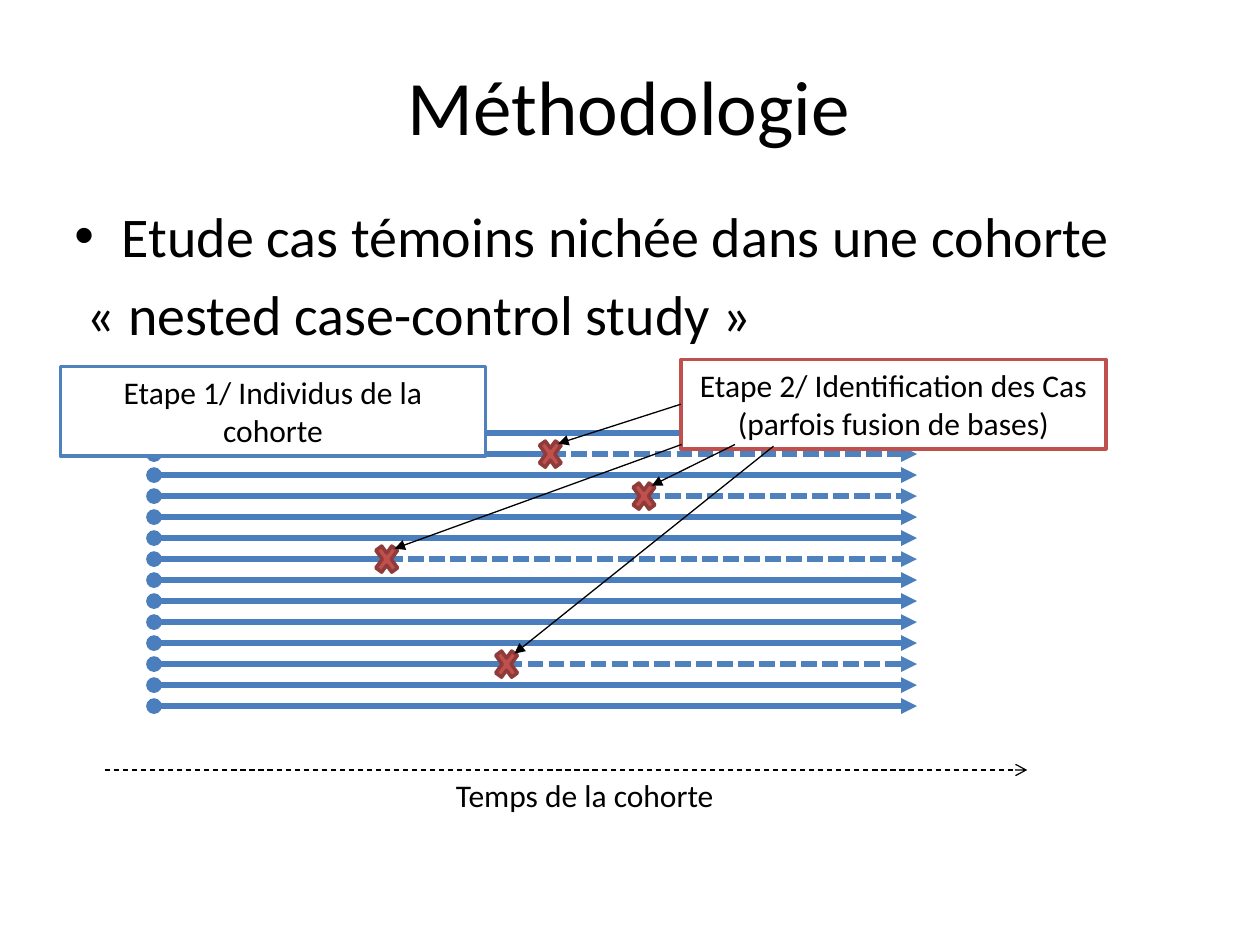
from pptx import Presentation
from pptx.dml.color import RGBColor
from pptx.enum.dml import MSO_LINE
from pptx.enum.shapes import MSO_CONNECTOR, MSO_SHAPE
from pptx.enum.text import MSO_ANCHOR, PP_ALIGN
from pptx.oxml.ns import qn
from pptx.util import Pt
from lxml.etree import SubElement

BLACK = RGBColor(0x00, 0x00, 0x00)
WHITE = RGBColor(0xFF, 0xFF, 0xFF)
BLUE = RGBColor(0x4F, 0x81, 0xBD)
LINE_BLUE = RGBColor(0x4B, 0x7E, 0xBC)
RED = RGBColor(0xC0, 0x50, 0x4D)
DARK_RED = RGBColor(0x8E, 0x3B, 0x39)

ROW_COUNT, FIRST_ROW, ROW_PITCH = 14, 247.5, 12
ROW_START, ROW_END = 88, 524
CASES = {1: 314.5, 3: 368, 6: 221, 11: 289.5}  # row number: time of the event
POINTER_STARTS = {3: (420, 254), 6: (389.5, 254), 11: (442, 255)}


def row_y(row):
    return FIRST_ROW + row * ROW_PITCH


class SlideBuilder:
    """Draws elements on one slide in a common style; lengths are in points."""

    def __init__(self, slide, font="Calibri"):
        self.slide = slide
        self.font = font

    def style(self, paragraph, size, align=None):
        paragraph.alignment = align
        paragraph.font.name = self.font
        paragraph.font.size = Pt(size)
        paragraph.font.color.rgb = BLACK

    def title(self, text, left, top, width, height):
        title = self.slide.shapes.title
        title.left, title.top = Pt(left), Pt(top)
        title.width, title.height = Pt(width), Pt(height)
        title.text_frame.text = text
        title.text_frame.vertical_anchor = MSO_ANCHOR.MIDDLE
        self.style(title.text_frame.paragraphs[0], 44, PP_ALIGN.CENTER)

    def text(self, lines, left, top, width, height, size):
        box = self.slide.shapes.add_textbox(Pt(left), Pt(top), Pt(width), Pt(height))
        box.text_frame.word_wrap = True
        box.text_frame.text = "\n".join(lines)
        for paragraph in box.text_frame.paragraphs:
            self.style(paragraph, size)
        return box.text_frame.paragraphs

    def indent(self, paragraph, margin, first_line=0, bullet=None):
        properties = paragraph._p.get_or_add_pPr()
        properties.set("marL", str(Pt(margin)))
        properties.set("indent", str(Pt(first_line)))
        if bullet:
            # Bullet elements come before the default run properties.
            for position, (tag, name, value) in enumerate(
                [("a:buFont", "typeface", "Arial"), ("a:buChar", "char", bullet)]
            ):
                element = SubElement(properties, qn(tag))
                element.set(name, value)
                properties.insert(position, element)

    def shape(self, kind, left, top, width, height, fill, line):
        shape = self.slide.shapes.add_shape(kind, Pt(left), Pt(top), Pt(width), Pt(height))
        shape.shadow.inherit = False
        shape.fill.solid()
        shape.fill.fore_color.rgb = fill
        shape.line.color.rgb = line
        shape.line.width = Pt(2)
        return shape

    def label(self, text, left, top, line):
        box = self.shape(MSO_SHAPE.RECTANGLE, left, top, 243, 51, WHITE, line)
        box.text_frame.word_wrap = True
        box.text_frame.text = text
        self.style(box.text_frame.paragraphs[0], 18, PP_ALIGN.CENTER)
        return box

    def cross(self, x, y):
        """Draw a case mark centred on the point."""
        width, height = 17.5, 24
        self.shape(MSO_SHAPE.MATH_MULTIPLY, x - width / 2, y - height / 2,
                   width, height, RED, DARK_RED)

    def arrow(self, start, end, color=BLACK, width=0.75, dash=None, head=None, tail="triangle"):
        connector = self.slide.shapes.add_connector(
            MSO_CONNECTOR.STRAIGHT, *(Pt(value) for value in (*start, *end)))
        connector.line.color.rgb = color
        connector.line.width = Pt(width)
        if dash:
            connector.line.dash_style = dash
        line = connector.line._get_or_add_ln()
        for tag, kind in (("a:headEnd", head), ("a:tailEnd", tail)):
            if kind:
                SubElement(line, qn(tag)).set("type", kind)
        SubElement(connector._element.spPr, qn("a:effectLst"))
        return connector


def main():
    presentation = Presentation()
    presentation.slide_width, presentation.slide_height = Pt(720), Pt(540)
    slide = presentation.slides.add_slide(presentation.slide_layouts[5])
    builder = SlideBuilder(slide)

    builder.title("Méthodologie", 35.5, 15, 648, 90)
    study, translation = builder.text(
        ["Etude cas témoins nichée dans une cohorte", "« nested case-control study »"],
        35.5, 111.5, 648, 356, 32)
    builder.indent(study, 27, -27, "•")
    builder.indent(translation, 7)
    translation.space_before = Pt(6.4)

    for row in range(ROW_COUNT):
        y = row_y(row)
        if row in CASES:
            builder.arrow((CASES[row], y), (ROW_END, y), BLUE, 3, MSO_LINE.SQUARE_DOT)
        end = CASES[row] + 4 if row in CASES else ROW_END
        builder.arrow((ROW_START, y), (end, y), LINE_BLUE, 3, head="oval")
    for row, x in CASES.items():
        builder.cross(x, row_y(row))

    builder.arrow((60, 440), (587, 440), dash=MSO_LINE.DASH, tail="arrow")
    builder.text(["Temps de la cohorte"], 253.5, 440, 232.5, 29, 18)

    builder.label("Etape 1/ Individus de la cohorte", 34.5, 209.5, BLUE)
    cases_box = builder.label(
        "Etape 2/ Identification des Cas (parfois fusion de bases)", 389, 205.5, RED)

    for row, x in CASES.items():
        start = POINTER_STARTS.get(row, (389, 231))
        pointer = builder.arrow(start, (x + 4.5, row_y(row) - 6))
        if row not in POINTER_STARTS:
            pointer.begin_connect(cases_box, 1)

    presentation.save("out.pptx")


if __name__ == "__main__":
    main()
